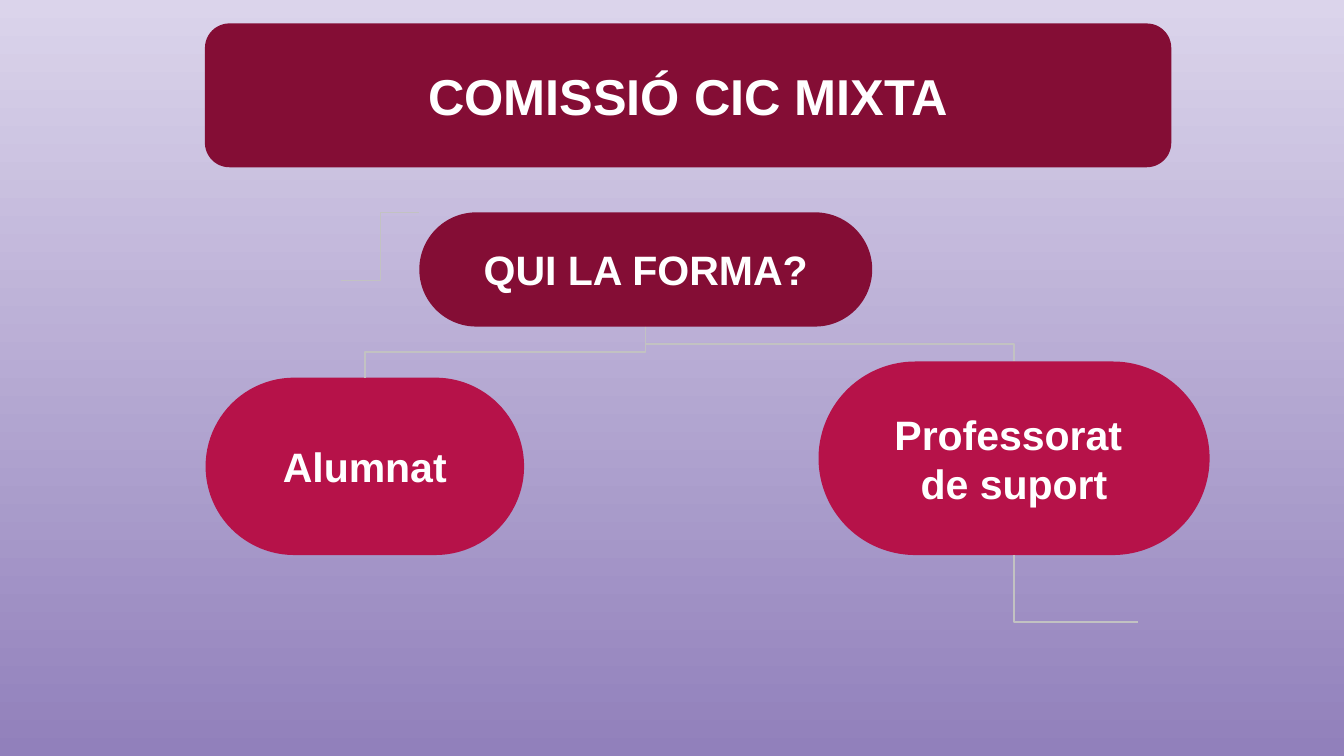
from lxml import etree
from pptx import Presentation
from pptx.dml.color import RGBColor
from pptx.enum.shapes import MSO_CONNECTOR, MSO_SHAPE
from pptx.enum.text import MSO_ANCHOR, PP_ALIGN
from pptx.oxml.ns import qn
from pptx.util import Inches, Pt

LILAC = RGBColor(0xDB, 0xD4, 0xEB)
PURPLE = RGBColor(0x91, 0x80, 0xBB)
MAROON = RGBColor(0x84, 0x0D, 0x35)
CRIMSON = RGBColor(0xB6, 0x12, 0x49)
GREY = RGBColor(0xC2, 0xC2, 0xC2)
WHITE = RGBColor(0xFF, 0xFF, 0xFF)

# Widescreen page, 16:9
prs = Presentation()
prs.slide_width = Inches(10)
prs.slide_height = Inches(10 * 9 / 16)
slide = prs.slides.add_slide(prs.slide_layouts[6])

# Background fades from top to bottom
background = slide.background.fill
background.gradient()
background.gradient_angle = 270
for stop, color in zip(background.gradient_stops, (LILAC, PURPLE)):
    stop.color.rgb = color


def add_box(text, left, top, width, height, fill=CRIMSON, line=None, size=22, corner=0.5):
    box = slide.shapes.add_shape(MSO_SHAPE.ROUNDED_RECTANGLE, Inches(left), Inches(top),
                                 Inches(width), Inches(height))
    box.adjustments[0] = corner
    box.shadow.inherit = False
    box.fill.solid()
    box.fill.fore_color.rgb = fill
    if line is None:
        box.line.fill.background()
    else:
        box.line.color.rgb = line
        box.line.width = Pt(0.75)
    frame = box.text_frame
    frame.word_wrap = True
    frame.vertical_anchor = MSO_ANCHOR.MIDDLE
    frame.margin_left = frame.margin_right = Inches(0.1)
    frame.margin_top = frame.margin_bottom = Inches(0.1)
    frame.text = text
    for paragraph in frame.paragraphs:
        paragraph.alignment = PP_ALIGN.CENTER
        font = paragraph.font
        font.name, font.size, font.bold = "Arial", Pt(size), True
        font.color.rgb = WHITE
    return box


def add_elbow(x1, y1, x2, y2):
    elbow = slide.shapes.add_connector(MSO_CONNECTOR.ELBOW, Inches(x1), Inches(y1),
                                       Inches(x2), Inches(y2))
    elbow.line.color.rgb = GREY
    elbow.line.width = Pt(0.75)
    etree.SubElement(elbow.element.spPr, qn("a:effectLst"))
    return elbow


# Loose line behind the boxes
add_elbow(2.54, 2.09, 3.12, 1.58)

# Heading, question and its two answers
add_box("COMISSIÓ CIC MIXTA", 1.53, 0.18, 7.18, 1.06,
        fill=MAROON, line=MAROON, size=27, corner=0.167)
question = add_box("QUI LA FORMA?", 3.12, 1.58, 3.37, 0.85, fill=MAROON)
teachers = add_box("Professorat \nde suport", 6.09, 2.69, 2.91, 1.44)
students = add_box("Alumnat", 1.53, 2.81, 2.37, 1.32)

# Lines between the boxes
to_teachers = add_elbow(4.81, 2.44, 7.55, 2.69)
to_teachers.begin_connect(question, 2)
to_teachers.end_connect(teachers, 0)
from_students = add_elbow(2.72, 2.81, 4.81, 2.44)
from_students.begin_connect(students, 0)
from_students.end_connect(question, 2)
below_teachers = add_elbow(7.55, 4.13, 8.47, 4.63)
below_teachers.begin_connect(teachers, 2)
below_teachers.element.spPr.find(qn("a:prstGeom")).set("prst", "bentConnector2")

# Turn these lines a quarter so that they leave the boxes vertically
for elbow in (to_teachers, from_students, below_teachers):
    goes_down = elbow.end_y > elbow.begin_y
    left, top, width, height = elbow.left, elbow.top, elbow.width, elbow.height
    elbow.left = left + (width - height) // 2
    elbow.top = top + (height - width) // 2
    elbow.width, elbow.height = height, width
    xfrm = elbow.element.spPr.find(qn("a:xfrm"))
    xfrm.set("rot", str(270 * 60000))
    xfrm.set("flipH", "1" if goes_down else "0")
    xfrm.set("flipV", "0")

prs.save("out.pptx")
